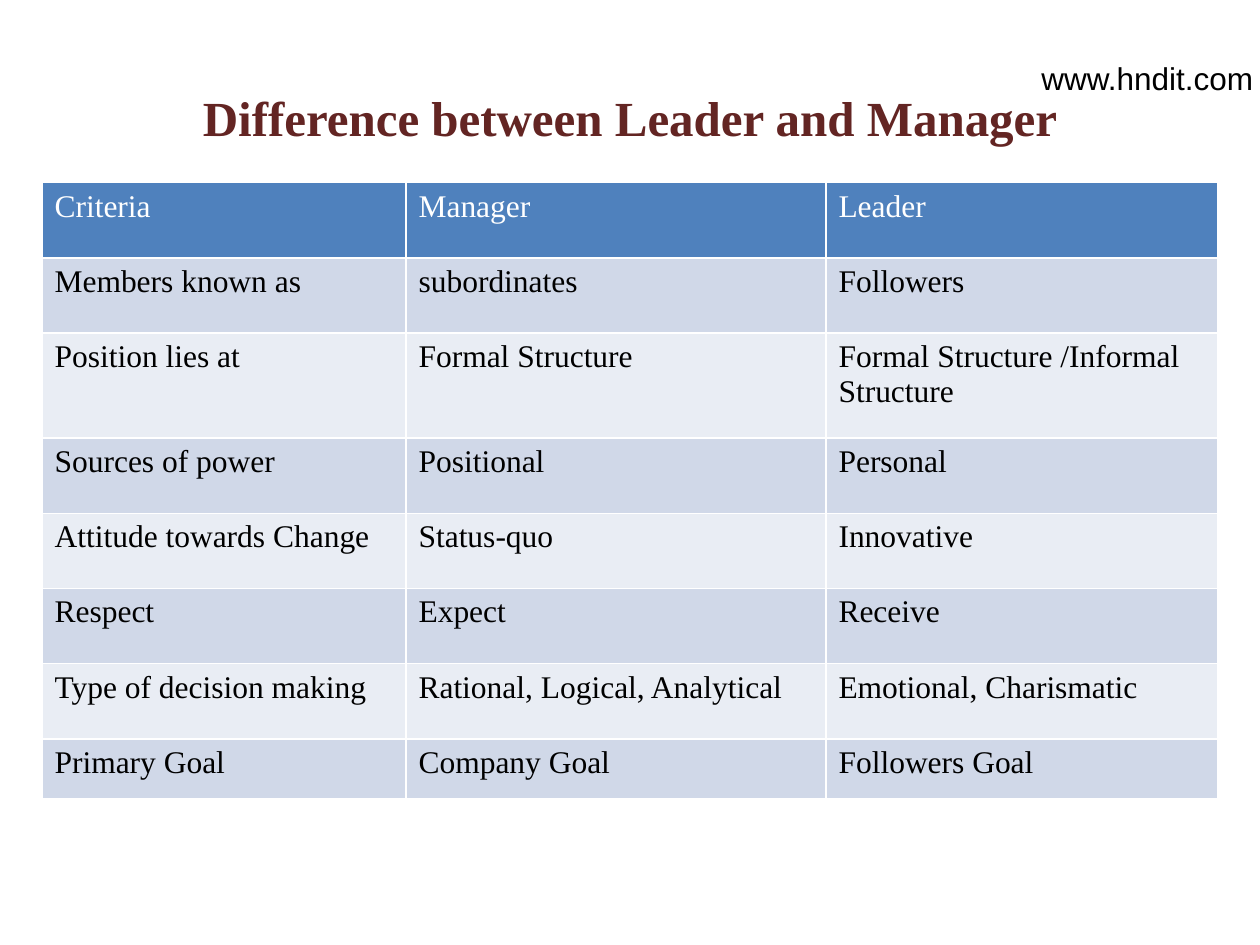
from pptx import Presentation
from pptx.dml.color import RGBColor as RGB
from pptx.enum.text import MSO_ANCHOR as Anchor, PP_ALIGN as Align
from pptx.util import Pt

COLORS = {
    "title": "632523",
    "header": "4F81BD",
    "header_text": "FFFFFF",
    "odd_row": "D0D8E8",
    "even_row": "E9EDF4",
    "text": "000000",
}
SERIF, SANS = "Times New Roman", "Arial"

COMPARISON = [
    ("Criteria", "Manager", "Leader"),
    ("Members known as", "subordinates", "Followers"),
    ("Position lies at", "Formal Structure", "Formal Structure /Informal Structure"),
    ("Sources of power", "Positional", "Personal"),
    ("Attitude towards Change", "Status-quo", "Innovative"),
    ("Respect", "Expect", "Receive"),
    ("Type of decision making", "Rational, Logical, Analytical", "Emotional, Charismatic"),
    ("Primary Goal", "Company Goal", "Followers Goal"),
]
COLUMN_WIDTHS = [208, 240, 224]
ROW_HEIGHTS = [43, 43, 60, 43, 43, 43, 43, 34]


class SlideBuilder:
    def __init__(self, slide):
        self.slide = slide

    def set_text(self, frame, text, color, size=18, face=SERIF, bold=False):
        paragraph = frame.paragraphs[0]
        paragraph.text = text
        font = paragraph.font
        font.name, font.size, font.bold = face, Pt(size), bold
        font.color.rgb = RGB.from_string(COLORS[color])
        return paragraph

    def title(self, text, left, top, width, height):
        heading = self.slide.shapes.title
        heading.left, heading.top = Pt(left), Pt(top)
        heading.width, heading.height = Pt(width), Pt(height)
        heading.text_frame.vertical_anchor = Anchor.MIDDLE
        self.set_text(heading.text_frame, text, "title", 28, bold=True).alignment = Align.CENTER

    def table(self, rows, left, top, widths, heights):
        grid = self.slide.shapes.add_table(
            len(rows), len(widths), Pt(left), Pt(top), Pt(sum(widths)), Pt(sum(heights))
        ).table
        for column, width in zip(grid.columns, widths):
            column.width = Pt(width)
        for index, (row, height, entries) in enumerate(zip(grid.rows, heights, rows)):
            row.height = Pt(height)
            band = "header" if index == 0 else "odd_row" if index % 2 else "even_row"
            color = "header_text" if index == 0 else "text"
            for cell, entry in zip(row.cells, entries):
                cell.fill.solid()
                cell.fill.fore_color.rgb = RGB.from_string(COLORS[band])
                self.set_text(cell.text_frame, entry, color)

    def label(self, text, left, top, width, height):
        frame = self.slide.shapes.add_textbox(
            Pt(left), Pt(top), Pt(width), Pt(height)
        ).text_frame
        frame.word_wrap = True
        self.set_text(frame, text, "text", face=SANS)


def main():
    deck = Presentation()
    deck.slide_width, deck.slide_height = Pt(720), Pt(540)
    title_only = deck.slide_layouts[5]
    builder = SlideBuilder(deck.slides.add_slide(title_only))
    builder.title("Difference between Leader and Manager", 36, 21.6, 648, 90)
    builder.table(COMPARISON, 24, 104.4, COLUMN_WIDTHS, ROW_HEIGHTS)
    builder.label("www.hndit.com", 588, 30, 174, 36)
    deck.save("out.pptx")


if __name__ == "__main__":
    main()
